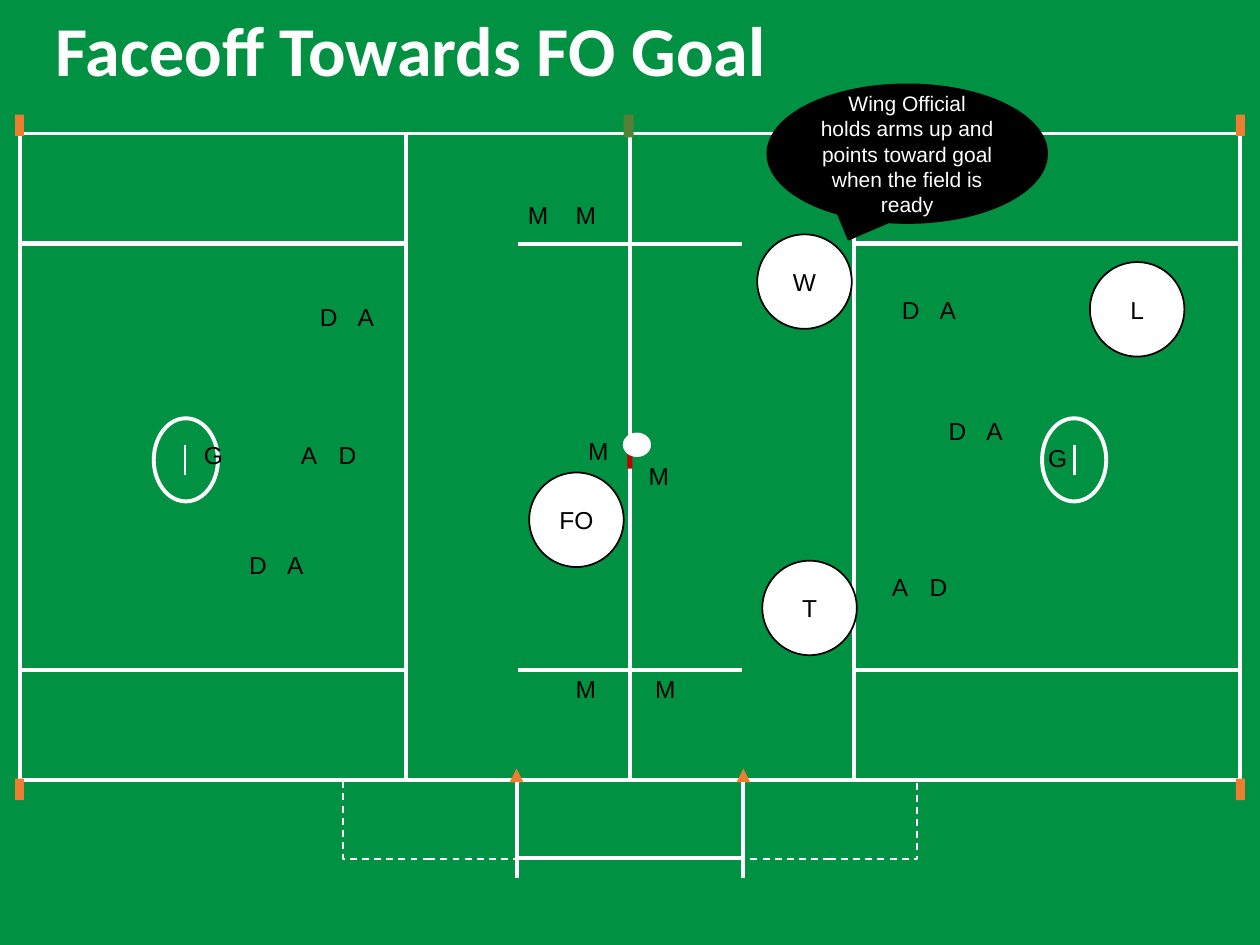
from lxml.etree import SubElement
from pptx import Presentation
from pptx.dml.color import RGBColor
from pptx.enum.dml import MSO_LINE
from pptx.enum.shapes import MSO_CONNECTOR, MSO_SHAPE
from pptx.enum.text import MSO_ANCHOR, MSO_AUTO_SIZE, PP_ALIGN
from pptx.oxml.ns import qn
from pptx.util import Inches, Pt

COLUMNS = 100
ROWS = 75
CELL = Inches(0.1)
WHITE, BLACK, GRASS = "FFFFFF", "000000", "009242"
ORANGE, OLIVE, RED = "ED7D31", "548135", "C00000"
OFFICIAL_SIZE = 7.5
LETTER_TAB = 3

OFFICIALS_BEHIND_PLAYERS = [("FO", 42, 37.5), ("W", 60.1, 18.6)]
OFFICIALS_IN_FRONT = [("L", 86.5, 20.8), ("T", 60.5, 44.5)]
PAIRS = [
    ("D\tA", 24.4, 23.5), ("A\tD", 22.9, 34.4), ("D\tA", 18.8, 43.2),
    ("D\tA", 74.3, 32.5), ("A\tD", 69.8, 44.9), ("D\tA", 70.6, 22.9),
]
SINGLES = [
    ("M", 40.9, 15.4), ("M", 44.7, 15.4), ("M", 51, 53), ("M", 44.7, 53),
    ("M", 45.7, 34.1), ("M", 50.5, 36.1), ("G", 15.2, 34.4), ("G", 82.2, 34.7),
]


def cells(*counts):
    return [round(count * CELL) for count in counts]


def color(value):
    return RGBColor.from_string(value)


def mirror(left, width, mirrored):
    return COLUMNS - left - width if mirrored else left


def paint(shape, fill=None, line=None, weight=1, dash=None):
    shape.shadow.inherit = False
    if fill:
        shape.fill.solid()
        shape.fill.fore_color.rgb = color(fill)
    else:
        shape.fill.background()
    if line:
        shape.line.color.rgb = color(line)
        shape.line.width = Pt(weight)
        shape.line.dash_style = dash
    else:
        shape.line.fill.background()


def add_figure(page, kind, left, top, width, height, **style):
    shape = page.shapes.add_shape(kind, *cells(left, top, width, height))
    paint(shape, **style)
    return shape


def add_line(page, start, end, weight=2.25):
    line = page.shapes.add_connector(MSO_CONNECTOR.STRAIGHT, *cells(*start, *end))
    line.line.color.rgb = color(WHITE)
    line.line.width = Pt(weight)
    SubElement(line._element.spPr, qn("a:effectLst"))


def add_cone(page, middle, top):
    builder = page.shapes.build_freeform(*cells(middle, top))
    builder.add_line_segments(
        [cells(middle + 0.55, top + 1.1), cells(middle - 0.55, top + 1.1)], close=True
    )
    paint(builder.convert_to_shape(), fill=ORANGE)


def write(para, text, size, shade, font="Arial", bold=False):
    span = para.add_run()
    span.text = text
    span.font.name = font
    span.font.size = Pt(size)
    span.font.bold = bold
    span.font.color.rgb = color(shade)


def write_centered(shape, text, size, shade):
    frame = shape.text_frame
    frame.word_wrap = True
    frame.vertical_anchor = MSO_ANCHOR.MIDDLE
    para = frame.paragraphs[0]
    para.alignment = PP_ALIGN.CENTER
    write(para, text, size, shade)


def add_tab_stop(para, column):
    tabs = SubElement(para._p.get_or_add_pPr(), qn("a:tabLst"))
    SubElement(tabs, qn("a:tab"), pos=str(cells(column)[0]), algn="l")


def add_players(page, players, width):
    for letters, left, top in players:
        box = page.shapes.add_textbox(*cells(left, top, width, 3.4))
        frame = box.text_frame
        frame.word_wrap = True
        frame.auto_size = MSO_AUTO_SIZE.SHAPE_TO_FIT_TEXT
        para = frame.paragraphs[0]
        if "\t" in letters:
            add_tab_stop(para, LETTER_TAB)
        write(para, letters, 14, BLACK)


def add_officials(page, officials):
    for label, left, top in officials:
        circle = add_figure(page, MSO_SHAPE.OVAL, left, top, OFFICIAL_SIZE,
                            OFFICIAL_SIZE, fill=WHITE, line=BLACK)
        write_centered(circle, label, 14, BLACK)


def add_half_field(page, mirrored):
    def figure(kind, left, top, width, height, **style):
        add_figure(page, kind, mirror(left, width, mirrored), top, width, height, **style)

    zones = [(32.2, 10.6, 17.8, 51.3), (1.6, 10.6, 30.6, 8.7),
             (1.6, 53.2, 30.6, 8.7), (1.6, 19.4, 30.6, 33.8)]
    for zone in zones:
        figure(MSO_SHAPE.RECTANGLE, *zone, line=WHITE, weight=2.25)
    for top in (9.1, 61.8):
        figure(MSO_SHAPE.RECTANGLE, 1.2, top, 0.7, 1.7, fill=ORANGE)
    figure(MSO_SHAPE.RECTANGLE, 27.2, 62, 13.8, 6.2, line=WHITE, dash=MSO_LINE.DASH)
    figure(MSO_SHAPE.OVAL, 12.2, 33.2, 5.1, 6.6, line=WHITE, weight=2.25)

    goal = mirror(14.7, 0, mirrored)
    gate = mirror(41, 0, mirrored)
    wing = mirror(41.1, 0, mirrored)
    add_cone(page, gate, 61)
    add_line(page, (goal, 37.7), (goal, 35.3), 1.5)
    add_line(page, (gate, 69.7), (gate, 62.1))
    for row in (53.2, 19.4, 68.1):
        add_line(page, (COLUMNS / 2, row), (wing, row))


def add_title(page):
    title = page.shapes.title
    title.left, title.top, title.width, title.height = cells(3.4, 2.3, 67.2, 3.9)
    frame = title.text_frame
    frame.auto_size = MSO_AUTO_SIZE.NONE
    frame.vertical_anchor = MSO_ANCHOR.MIDDLE
    para = frame.paragraphs[0]
    para.alignment = PP_ALIGN.LEFT
    para.line_spacing = 0.9
    write(para, "Faceoff Towards FO Goal", 40, WHITE, "Calibri", True)


def add_callout(page):
    callout = add_figure(page, MSO_SHAPE.OVAL_CALLOUT, 60.9, 6.7, 22.2, 11,
                         fill=BLACK, line=BLACK)
    callout.adjustments[0] = -0.21
    callout.adjustments[1] = 0.62
    write_centered(
        callout,
        "Wing Official holds arms up and points toward goal when the field is ready",
        12, WHITE,
    )


def main():
    deck = Presentation()
    deck.slide_width, deck.slide_height = cells(COLUMNS, ROWS)
    page = deck.slides.add_slide(deck.slide_layouts[5])
    page.background.fill.solid()
    page.background.fill.fore_color.rgb = color(GRASS)

    for mirrored in (False, True):
        add_half_field(page, mirrored)
    add_figure(page, MSO_SHAPE.RECTANGLE, 49.5, 9.1, 0.8, 1.8, fill=OLIVE)
    add_figure(page, MSO_SHAPE.RECTANGLE, 49.8, 35.7, 0.4, 1.5, fill=RED)

    add_title(page)
    add_officials(page, OFFICIALS_BEHIND_PLAYERS)
    add_players(page, PAIRS, 7.3)
    add_players(page, SINGLES, 4.8)
    add_figure(page, MSO_SHAPE.OVAL, 49.5, 34.4, 2.1, 1.8, fill=WHITE, line=WHITE)
    add_callout(page)
    add_officials(page, OFFICIALS_IN_FRONT)
    deck.save("out.pptx")


if __name__ == "__main__":
    main()
